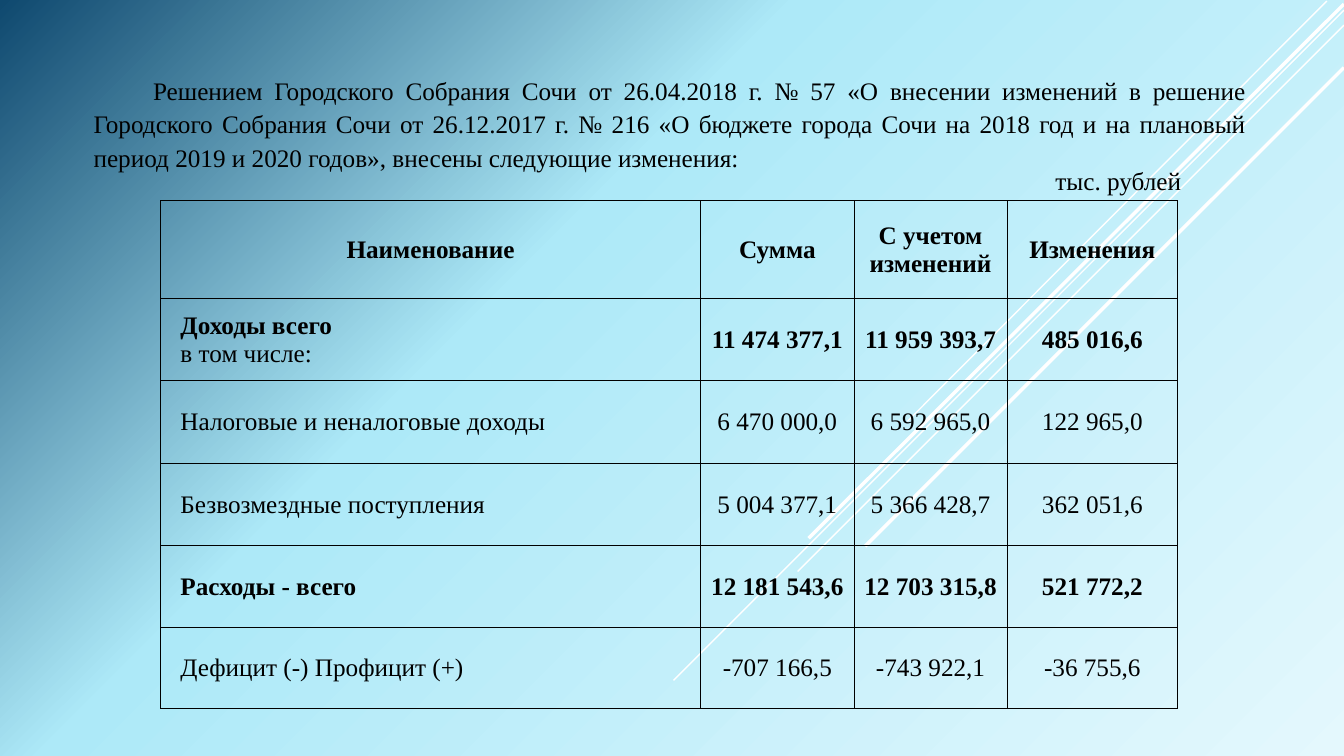
from lxml import etree
from pptx import Presentation
from pptx.dml.color import RGBColor
from pptx.enum.shapes import MSO_CONNECTOR
from pptx.enum.text import MSO_ANCHOR, MSO_AUTO_SIZE, PP_ALIGN
from pptx.oxml import parse_xml
from pptx.oxml.ns import nsdecls, qn
from pptx.util import Inches, Pt

STRAIGHT = MSO_CONNECTOR.STRAIGHT
MIDDLE = MSO_ANCHOR.MIDDLE
GROW = MSO_AUTO_SIZE.SHAPE_TO_FIT_TEXT
LEFT, CENTER, JUSTIFY = PP_ALIGN.LEFT, PP_ALIGN.CENTER, PP_ALIGN.JUSTIFY
COLORS = {"text": "000000", "ray": "FFFFFF", "light": "E4F8FD",
          "mid": "ADE9F8", "dark": "0F496F"}


def style(para, align, bold=False):
    para.alignment = align
    font = para.font
    font.name, font.size, font.bold = "Times New Roman", Pt(18), bold
    font.color.rgb = RGBColor.from_string(COLORS["text"])


def add_note(left, top, width, height, text, align):
    """Add a text box of one paragraph and return that paragraph."""
    box = slide.shapes.add_textbox(
        Inches(left), Inches(top), Inches(width), Inches(height))
    frame = box.text_frame
    frame.word_wrap = True
    frame.auto_size = GROW
    para = frame.paragraphs[0]
    para.text = text
    style(para, align)
    return para


prs = Presentation()
prs.slide_width, prs.slide_height = Inches(13.33), Inches(7.5)
slide = prs.slides.add_slide(prs.slide_layouts[6])

# Background: light in the lower right corner, dark in the upper left
slide.background.fill.solid()
back = slide.element.xpath(".//p:bgPr")[0]
stops = "".join(
    f'<a:gs pos="{pos * 1000}"><a:srgbClr val="{COLORS[name]}"/></a:gs>'
    for pos, name in ((0, "light"), (62, "mid"), (100, "dark")))
back.replace(back[0], parse_xml(
    f'<a:gradFill {nsdecls("a")} rotWithShape="1"><a:gsLst>{stops}</a:gsLst>'
    '<a:path path="circle"><a:fillToRect l="100000" t="100000"/></a:path>'
    '</a:gradFill>'))

# Diagonal rays: start, end, weight
rays = [
    (13.16, 0.01, 9, 4.18, 1),
    (13.33, 0.1, 6.68, 6.75, 1),
    (13.33, 0.25, 7.91, 5.67, 1),
    (13.33, 0.04, 8.02, 5.34, 2.5),
    (13.33, 0.67, 8.58, 5.42, 2.5),
]
for *ends, weight in rays:
    ray = slide.shapes.add_connector(STRAIGHT, *map(Inches, ends))
    ray.line.color.rgb = RGBColor.from_string(COLORS["ray"])
    ray.line.width = Pt(weight)
    etree.SubElement(ray.element.spPr, qn("a:effectLst"))

add_note(10.37, 1.59, 1.91, 0.4, "тыс. рублей", LEFT)
intro = add_note(
    0.83, 0.67, 11.63, 1.01,
    "Решением Городского Собрания Сочи от 26.04.2018 г. № 57 «О внесении "
    "изменений в решение Городского Собрания Сочи от 26.12.2017 г. № 216 "
    "«О бюджете города Сочи на 2018 год и на плановый период 2019 и 2020 "
    "годов», внесены следующие изменения:", JUSTIFY)
intro.line_spacing = 1.1
intro._p.get_or_add_pPr().set("indent", str(Inches(0.59)))

# Budget table
rows = [
    ("Наименование", "Сумма", "С учетом изменений", "Изменения"),
    ("Доходы всего\nв том числе:", "11 474 377,1", "11 959 393,7", "485 016,6"),
    ("Налоговые и неналоговые доходы", "6 470 000,0", "6 592 965,0", "122 965,0"),
    ("Безвозмездные поступления", "5 004 377,1", "5 366 428,7", "362 051,6"),
    ("Расходы - всего", "12 181 543,6", "12 703 315,8", "521 772,2"),
    ("Дефицит (-) Профицит (+)", "-707 166,5", "-743 922,1", "-36 755,6"),
]
bold_rows = (0, 1, 4)
widths = [5.36, 1.52, 1.52, 1.69]
heights = [0.97, 0.81, 0.83, 0.81, 0.81, 0.81]
table = slide.shapes.add_table(
    len(rows), len(widths), Inches(1.59), Inches(1.99),
    Inches(sum(widths)), Inches(sum(heights))).table
table.first_row = table.horz_banding = False
for col, width in zip(table.columns, widths):
    col.width = Inches(width)
for row, height in zip(table.rows, heights):
    row.height = Inches(height)

for r, texts in enumerate(rows):
    for c, text in enumerate(texts):
        label = c == 0 and r > 0
        cell = table.cell(r, c)
        cell.text = text
        cell.vertical_anchor = MIDDLE
        cell.margin_left = Inches(0.2 if label else 0.01)
        cell.margin_right = cell.margin_top = Inches(0.01)
        cell.margin_bottom = 0
        for n, para in enumerate(cell.text_frame.paragraphs):
            style(para, JUSTIFY if label else CENTER, r in bold_rows and n == 0)
        props = cell._tc.get_or_add_tcPr()
        for side in ("lnL", "lnR", "lnT", "lnB"):
            props.append(parse_xml(
                f'<a:{side} {nsdecls("a")} w="{Pt(0.5)}"><a:solidFill>'
                f'<a:srgbClr val="{COLORS["text"]}"/></a:solidFill></a:{side}>'))
        cell.fill.background()

prs.save("out.pptx")
